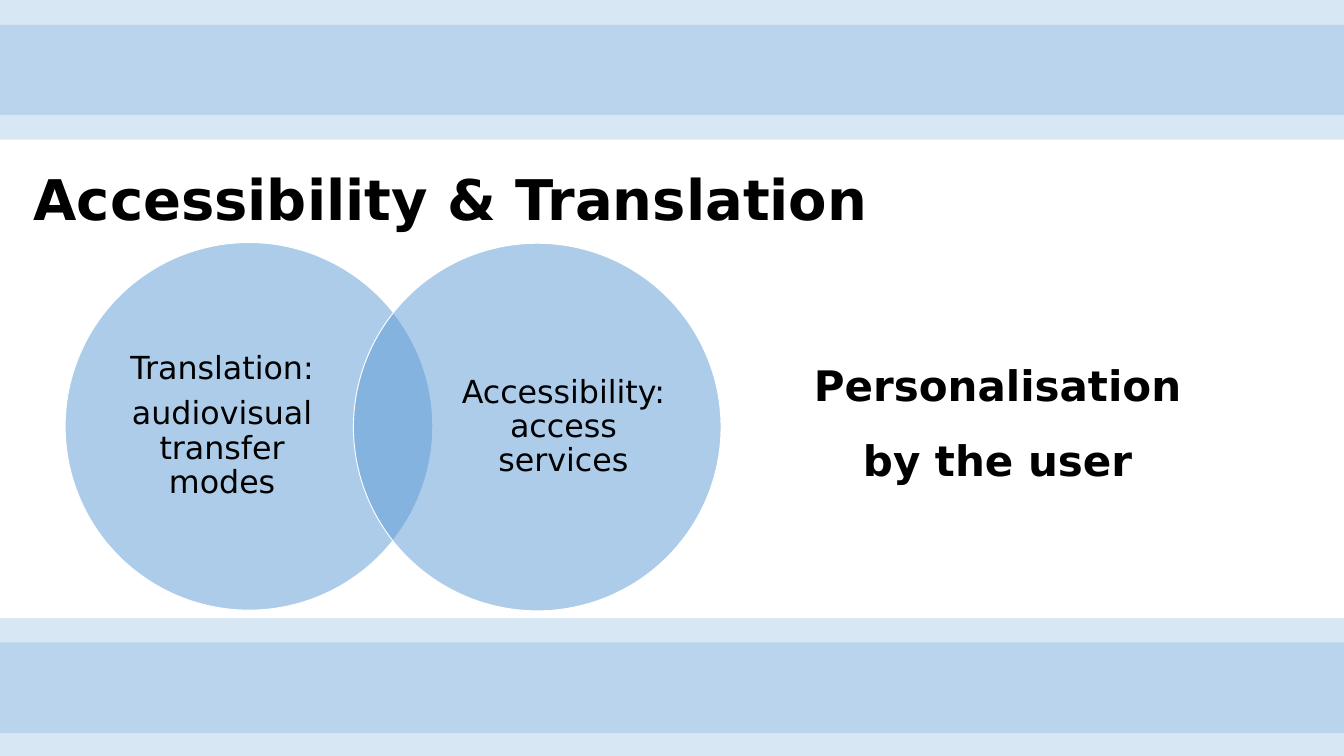
import pptx
import pptx.util
from lxml import etree
from pptx.dml.color import RGBColor
from pptx.enum.shapes import MSO_SHAPE
from pptx.enum.text import MSO_ANCHOR, MSO_AUTO_SIZE, PP_ALIGN
from pptx.oxml.ns import qn
from pptx.util import Inches, Pt

FONT = "DejaVu Sans"
BLUE = RGBColor(0x5B, 0x9B, 0xD5)
WHITE = RGBColor(0xFF, 0xFF, 0xFF)
BLACK = RGBColor(0x00, 0x00, 0x00)

SLIDE_WIDTH, SLIDE_HEIGHT = 20, 11.25
BAND_HEIGHT = 1.71
BAND_TOPS = (0, 0.37, 9.2, 9.56)
CIRCLE_SIZE = 5.47


def add_translucent_shape(slide, preset, left, top, width, height, opacity):
    """Add a blue shape whose opacity is given in percent."""
    shape = slide.shapes.add_shape(
        preset, Inches(left), Inches(top), Inches(width), Inches(height))
    shape.shadow.inherit = False
    shape.fill.solid()
    shape.fill.fore_color.rgb = BLUE
    color = shape.fill._xPr.find(qn("a:solidFill"))[0]
    etree.SubElement(color, qn("a:alpha")).set("val", str(opacity * 1000))
    shape.line.fill.background()
    return shape


def add_band(slide, top):
    add_translucent_shape(slide, MSO_SHAPE.RECTANGLE, 0, top,
                          SLIDE_WIDTH, BAND_HEIGHT, 24)


def add_circle(slide, left, top):
    circle = add_translucent_shape(slide, MSO_SHAPE.OVAL, left, top,
                                   CIRCLE_SIZE, CIRCLE_SIZE, 50)
    circle.line.color.rgb = WHITE
    circle.line.width = Pt(1)


def set_insets(frame, horizontal, vertical):
    frame.margin_left = frame.margin_right = Inches(horizontal)
    frame.margin_top = frame.margin_bottom = Inches(vertical)


def write_text(frame, text, size, alignment, line_spacing, bold=False, space_after=0):
    frame.word_wrap = True
    frame.text = text
    for paragraph in frame.paragraphs:
        paragraph.alignment = alignment
        paragraph.line_spacing = line_spacing
        paragraph.space_after = Pt(space_after)
        for run in paragraph.runs:
            run.font.name = FONT
            run.font.size = Pt(size)
            run.font.bold = bold
            run.font.color.rgb = BLACK


def add_title(slide, text):
    title = slide.shapes.title
    title.left, title.top = Inches(0.35), Inches(2.16)
    title.width, title.height = Inches(13.31), Inches(1.71)
    frame = title.text_frame
    frame.auto_size = MSO_AUTO_SIZE.NONE
    frame.vertical_anchor = MSO_ANCHOR.MIDDLE
    set_insets(frame, 0.15, 0.07)
    write_text(frame, text, 60, PP_ALIGN.LEFT, 0.9, bold=True)


def add_circle_label(slide, text, left, top):
    label = slide.shapes.add_textbox(
        Inches(left), Inches(top), Inches(3.15), Inches(4.18))
    frame = label.text_frame
    frame.vertical_anchor = MSO_ANCHOR.MIDDLE
    set_insets(frame, 0, 0)
    write_text(frame, text, 34, PP_ALIGN.CENTER, 0.9, space_after=12)


def add_statement(slide, text):
    statement = slide.shapes.add_textbox(
        Inches(11.54), Inches(4.92), Inches(6.61), Inches(2.22))
    frame = statement.text_frame
    frame.auto_size = MSO_AUTO_SIZE.SHAPE_TO_FIT_TEXT
    write_text(frame, text, 45, PP_ALIGN.CENTER, 1.5, bold=True)


def main():
    presentation = pptx.Presentation()
    presentation.slide_width = Inches(SLIDE_WIDTH)
    presentation.slide_height = Inches(SLIDE_HEIGHT)
    slide = presentation.slides.add_slide(presentation.slide_layouts[5])

    for top in BAND_TOPS:
        add_band(slide, top)
    add_title(slide, "Accessibility & Translation")

    add_circle(slide, 0.97, 3.61)
    add_circle_label(slide, "Translation:\naudiovisual transfer modes", 1.73, 4.25)
    add_circle(slide, 5.26, 3.62)
    add_circle_label(slide, "Accessibility: access services", 6.81, 4.27)

    add_statement(slide, "Personalisation by the user")
    presentation.save("out.pptx")


if __name__ == "__main__":
    main()
